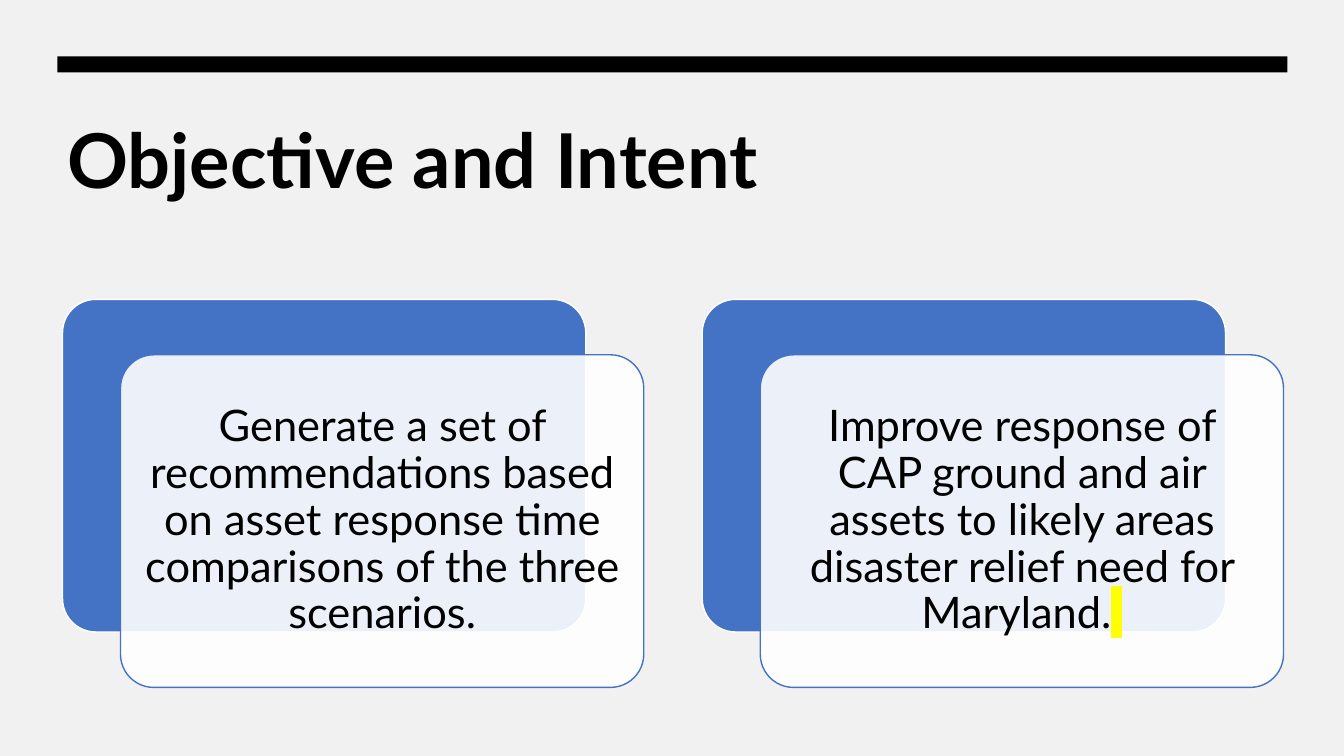
from lxml.etree import SubElement
from pptx import Presentation
from pptx.dml.color import RGBColor
from pptx.enum.shapes import MSO_SHAPE as Preset
from pptx.enum.text import MSO_ANCHOR as Anchor, PP_ALIGN as Align
from pptx.oxml.ns import qn
from pptx.util import Inches, Pt

COLORS = {"paper": "F2F1F1", "ink": "000000", "blue": "4472C4",
          "white": "FFFFFF", "marker": "FFFF00"}
FONT = "Lato"
CARD_TEXTS = [
    "Generate a set of recommendations based on asset response time "
    "comparisons of the three scenarios.",
    "Improve response of CAP ground and air assets to likely areas "
    "disaster relief need for Maryland.",
]
CARD_LEFT, CARD_TOP, CARD_PITCH = 0.62, 2.97, 6.345
CARD_WIDTH, CARD_HEIGHT = 5.19, 3.3
OFFSET_X, OFFSET_Y = 0.575, 0.55


def rgb(name):
    """Return the named colour."""
    return RGBColor.from_string(COLORS[name])


def add_panel(slide, preset, box, fill, line=None):
    """Add a filled shape with an optional thin outline."""
    panel = slide.shapes.add_shape(preset, *map(Inches, box))
    panel.shadow.inherit = False
    panel.fill.solid()
    panel.fill.fore_color.rgb = rgb(fill)
    if line:
        panel.line.color.rgb = rgb(line)
        panel.line.width = Pt(1)
    else:
        panel.line.fill.background()
    return panel


def add_rounded(slide, left, top, fill, line):
    """Add one of the two rounded layers of a card."""
    layer = add_panel(slide, Preset.ROUNDED_RECTANGLE,
                      (left, top, CARD_WIDTH, CARD_HEIGHT), fill, line)
    layer.adjustments[0] = 0.1
    return layer


def style_run(run, size, bold=False):
    """Set the font of a run."""
    run.font.name = FONT
    run.font.size = Pt(size)
    run.font.bold = bold
    run.font.color.rgb = rgb("ink")


def make_translucent(shape, percent):
    """Set the opacity of a solid fill."""
    color = shape.fill._xPr.find(qn("a:solidFill"))[0]
    SubElement(color, qn("a:alpha"), val=str(percent * 1000))


def highlight(run, color):
    """Mark a run with a highlight colour."""
    properties = run.font._element
    mark = SubElement(properties, qn("a:highlight"))
    SubElement(mark, qn("a:srgbClr"), val=COLORS[color])
    properties.find(qn("a:solidFill")).addnext(mark)


def add_title(slide, text):
    """Add the slide heading."""
    heading = slide.shapes.add_textbox(
        Inches(0.57), Inches(1.07), Inches(12.2), Inches(1.79))
    frame = heading.text_frame
    frame.word_wrap = True
    frame.vertical_anchor = Anchor.TOP
    frame.text = text
    style_run(frame.paragraphs[0].runs[0], 54, bold=True)


def add_card(slide, left, text):
    """Add a blue backing with an offset card and return its paragraph."""
    add_rounded(slide, left, CARD_TOP, "blue", "white")
    front = add_rounded(slide, left + OFFSET_X, CARD_TOP + OFFSET_Y, "white", "blue")
    make_translucent(front, 90)
    frame = front.text_frame
    frame.word_wrap = True
    frame.vertical_anchor = Anchor.MIDDLE
    frame.margin_left = frame.margin_right = Inches(0.13)
    frame.margin_top = frame.margin_bottom = Inches(0.13)
    frame.text = text
    statement = frame.paragraphs[0]
    statement.alignment = Align.CENTER
    statement.line_spacing = 0.9
    style_run(statement.runs[0], 31)
    return statement


def main():
    """Build and save the slide."""
    deck = Presentation()
    deck.slide_width, deck.slide_height = Inches(13.33), Inches(7.5)
    slide = deck.slides.add_slide(deck.slide_layouts[6])
    slide.background.fill.solid()
    slide.background.fill.fore_color.rgb = rgb("paper")
    add_title(slide, "Objective and Intent")
    add_panel(slide, Preset.RECTANGLE, (0.57, 0.56, 12.2, 0.16), "ink")
    statements = [add_card(slide, CARD_LEFT + index * CARD_PITCH, text)
                  for index, text in enumerate(CARD_TEXTS)]
    marked_space = statements[-1].add_run()
    marked_space.text = " "
    style_run(marked_space, 31)
    highlight(marked_space, "marker")
    deck.save("out.pptx")


if __name__ == "__main__":
    main()
